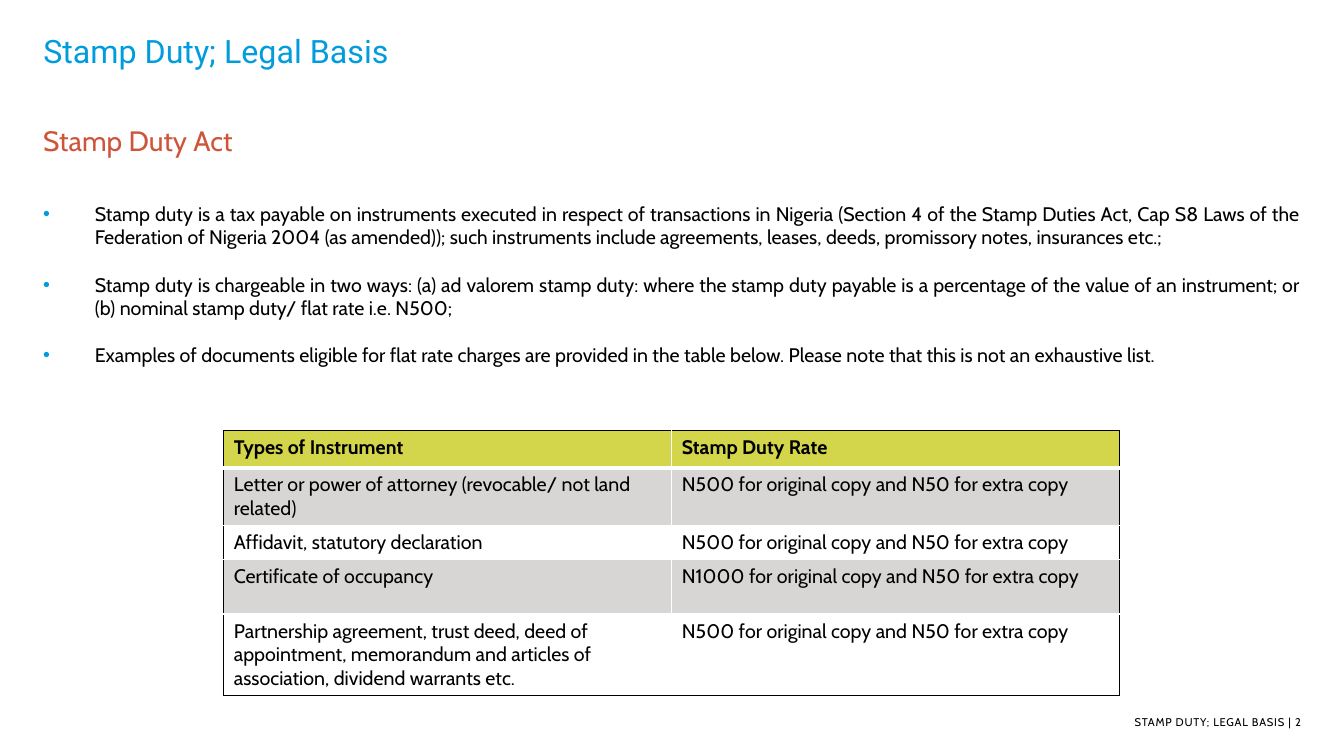
from dataclasses import dataclass

import lxml.etree
import pptx
import pptx.dml.color
import pptx.enum.text
import pptx.oxml.ns
import pptx.shapes.base
import pptx.slide
import pptx.table
import pptx.text.text
import pptx.util

Cm = pptx.util.Cm
Pt = pptx.util.Pt
qn = pptx.oxml.ns.qn
Align = pptx.enum.text.PP_ALIGN

BLUE, RED, BLACK, WHITE = "009CDC", "CE543A", "000000", "FFFFFF"
LIME, GREY = "D3D54A", "D8D6D5"
LEFT = 1.09
INDENT = Cm(1.3)


@dataclass
class Row:
    kind: str
    rate: str
    high: float


@dataclass
class Head:
    text: str
    top: float
    wide: float
    size: int
    face: str
    color: str


TITLE = Head("Stamp Duty; Legal Basis", 0.91, 22.07, 23, "Roboto", BLUE)
ACT = Head("Stamp Duty Act", 3.2, 25.55, 20, "Cabin", RED)

POINTS = [
    "Stamp duty is a tax payable on instruments executed in respect of transactions in Nigeria "
    "(Section 4 of the Stamp Duties Act, Cap S8 Laws of the Federation of Nigeria 2004 (as amended)); "
    "such instruments include agreements, leases, deeds, promissory notes, insurances etc.;",
    "Stamp duty is chargeable in two ways: (a) ad valorem stamp duty: where the stamp duty payable "
    "is a percentage of the value of an instrument; or (b) nominal stamp duty/ flat rate i.e. N500;",
    "Examples of documents eligible for flat rate charges are provided in the table below. "
    "Please note that this is not an exhaustive list.",
]

FLAT = "N500 for original copy and N50 for extra copy"
ROWS = [
    Row("Types of Instrument", "Stamp Duty Rate", 0.94),
    Row("Letter or power of attorney (revocable/ not land related)", FLAT, 1.37),
    Row("Affidavit, statutory declaration", FLAT, 0.82),
    Row("Certificate of occupancy", "N1000 for original copy and N50 for extra copy", 1.37),
    Row("Partnership agreement, trust deed, deed of appointment, memorandum and articles of "
        "association, dividend warrants etc.", FLAT, 1.93),
]


def rgb(code: str) -> pptx.dml.color.RGBColor:
    return pptx.dml.color.RGBColor.from_string(code)


def style(par: pptx.text.text._Paragraph, size: float, color: str = BLACK,
          face: str = "Cabin", bold: bool = False) -> None:
    font = par.font
    font.size, font.name, font.bold = Pt(size), face, bold
    font.color.rgb = rgb(color)


def place(shape: pptx.shapes.base.BaseShape, left: float, top: float, wide: float,
          high: float, foot: float = 0) -> pptx.text.text.TextFrame:
    """Move a text shape and return its frame, set to wrap from the top edge."""
    shape.left, shape.top, shape.width, shape.height = map(Cm, (left, top, wide, high))
    frame = shape.text_frame
    frame.word_wrap = True
    frame.auto_size = pptx.enum.text.MSO_AUTO_SIZE.NONE
    frame.vertical_anchor = pptx.enum.text.MSO_ANCHOR.TOP
    frame.margin_left = frame.margin_right = frame.margin_top = 0
    frame.margin_bottom = Cm(foot)
    return frame


def box(slide: pptx.slide.Slide) -> pptx.shapes.base.BaseShape:
    return slide.shapes.add_textbox(0, 0, 0, 0)


def draw_head(shape: pptx.shapes.base.BaseShape, head: Head) -> None:
    par = place(shape, LEFT, head.top, head.wide, 1.42, 0.13).paragraphs[0]
    par.text = head.text
    par.alignment = Align.LEFT
    par.line_spacing = 0.9
    style(par, head.size, head.color, head.face)


def dot(par: pptx.text.text._Paragraph) -> None:
    """Give a paragraph a blue bullet and a hanging indent."""
    props = par._p.get_or_add_pPr()
    props.set("marL", str(INDENT))
    props.set("indent", str(-INDENT))
    tint = lxml.etree.SubElement(props, qn("a:buClr"))
    lxml.etree.SubElement(tint, qn("a:srgbClr"), val=BLUE)
    lxml.etree.SubElement(props, qn("a:buFont"), typeface="Arial")
    lxml.etree.SubElement(props, qn("a:buChar"), char="•")


def draw_points(slide: pptx.slide.Slide) -> None:
    frame = place(box(slide), LEFT, 5.08, 31.7, 5)
    for i, text in enumerate(POINTS):
        par = frame.add_paragraph() if i else frame.paragraphs[0]
        par.text = text
        dot(par)
        par.alignment = Align.JUSTIFY
        if i:
            par.space_before = Pt(17)
        style(par, 14)


def edge(cell: pptx.table._Cell, sides: dict[str, tuple[str, float]]) -> None:
    """Add borders, given as colour and width by side in schema order."""
    props = cell._tc.get_or_add_tcPr()
    for i, (side, (color, wide)) in enumerate(sides.items()):
        line = lxml.etree.Element(qn(f"a:ln{side}"), w=str(Pt(wide)))
        fill = lxml.etree.SubElement(line, qn("a:solidFill"))
        lxml.etree.SubElement(fill, qn("a:srgbClr"), val=color)
        props.insert(i, line)


def draw_table(slide: pptx.slide.Slide) -> None:
    last = len(ROWS) - 1
    high = sum(row.high for row in ROWS)
    table = slide.shapes.add_table(
        len(ROWS), 2, Cm(5.64), Cm(10.85), Cm(22.58), Cm(high)).table
    outer, inner, rule = (BLACK, 1), (WHITE, 1), (WHITE, 3)
    for i, row in enumerate(ROWS):
        table.rows[i].height = Cm(row.high)
        for j, text in enumerate((row.kind, row.rate)):
            cell = table.cell(i, j)
            cell.text = text
            style(cell.text_frame.paragraphs[0], 14, bold=i == 0)
            cell.fill.solid()
            cell.fill.fore_color.rgb = rgb(LIME if i == 0 else GREY if i % 2 else WHITE)
            edge(cell, {
                "L": inner if j else outer,
                "R": outer if j else inner,
                "T": outer if i == 0 else rule if i == 1 else inner,
                "B": rule if i == 0 else outer if i == last else inner,
            })


def draw_foot(slide: pptx.slide.Slide) -> None:
    par = place(box(slide), 17.6, 18.03, 15.19, 0.48, 0.13).paragraphs[0]
    par.alignment = Align.RIGHT
    style(par, 8)
    for text, gap in (("STAMP DUTY; LEGAL BASIS | ", 50), ("2", 0)):
        run = par.add_run()
        run.text = text
        run._r.get_or_add_rPr().set("spc", str(gap))


def main() -> None:
    deck = pptx.Presentation()
    deck.slide_width, deck.slide_height = Cm(33.87), Cm(19.05)
    slide = deck.slides.add_slide(deck.slide_layouts[5])
    draw_head(slide.shapes.title, TITLE)
    draw_head(box(slide), ACT)
    draw_points(slide)
    draw_table(slide)
    draw_foot(slide)
    deck.save("out.pptx")


if __name__ == "__main__":
    main()
